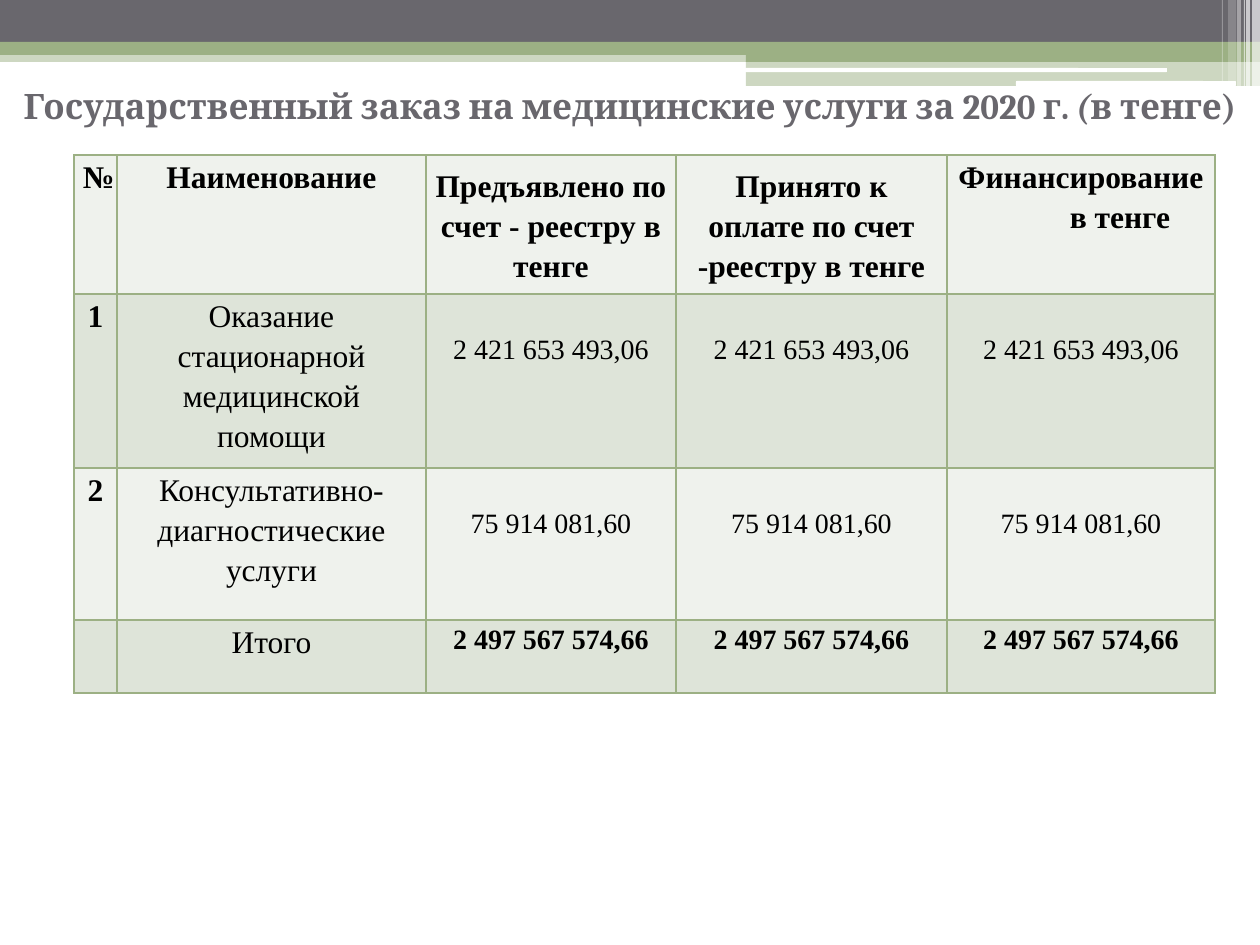
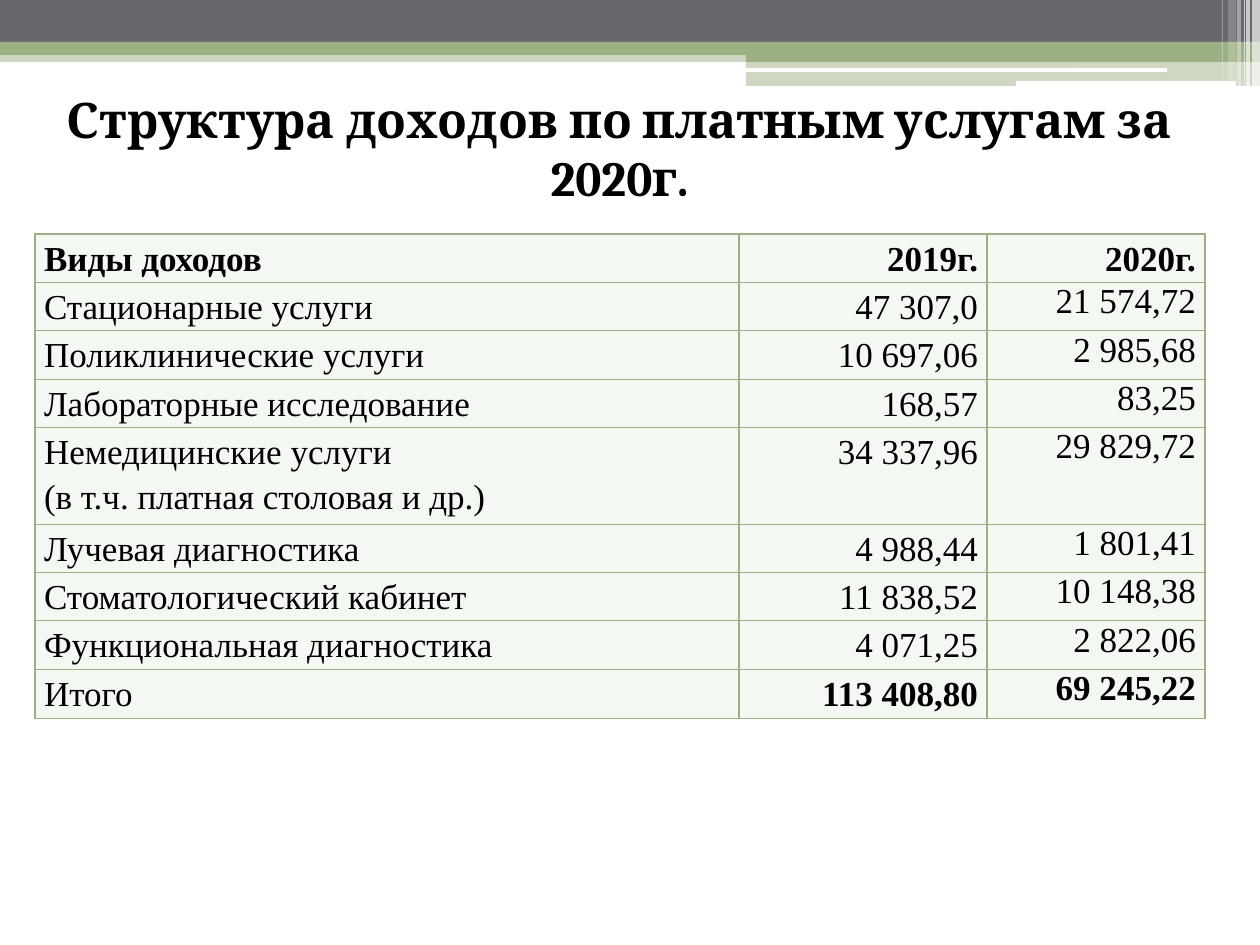
import pptx
import pptx.dml.color
import pptx.enum.shapes
import pptx.enum.text
import pptx.oxml
import pptx.oxml.ns
import pptx.util

RGB = pptx.dml.color.RGBColor
ALIGN = pptx.enum.text.PP_ALIGN
ANCHOR = pptx.enum.text.MSO_ANCHOR
SHAPE = pptx.enum.shapes.MSO_SHAPE

GREEN = RGB(0x9C, 0xB0, 0x84)
GREY = RGB(0x69, 0x67, 0x6D)
WHITE = RGB(0xFF, 0xFF, 0xFF)
BLACK = RGB(0x00, 0x00, 0x00)
BAND_LIGHT = RGB(0xEF, 0xF2, 0xED)
BAND_DARK = RGB(0xDE, 0xE4, 0xD9)
PALE = RGB(0xF4, 0xF8, 0xF2)

PX = 914400 / 126
WIDTH, HEIGHT = 1260, 945
CELL_MARGIN = 9
TITLE_FONT = "Cambria"
TABLE_FONT = "Times New Roman"


def px(n):
    return pptx.util.Emu(round(n * PX))


def write(p, text, size=18, font=TABLE_FONT, color=BLACK, bold=False,
          italic=False, align=ALIGN.CENTER, spacing=None, indent=0):
    """Add one run to a paragraph and format both."""
    p.alignment = align
    if spacing:
        p.line_spacing = spacing
    if indent:
        p._p.get_or_add_pPr().set("marL", str(px(indent)))
    r = p.add_run()
    r.text = text
    f = r.font
    f.size, f.name, f.bold, f.italic = pptx.util.Pt(size), font, bold, italic
    f.color.rgb = color


def add_alpha(fill, percent):
    color = fill._xPr.find(".//" + pptx.oxml.ns.qn("a:srgbClr"))
    color.append(pptx.oxml.parse_xml(
        f'<a:alpha {pptx.oxml.ns.nsdecls("a")} val="{percent * 1000}"/>'))


def add_borders(cell, width):
    for side in "LRTB":
        cell._tc.get_or_add_tcPr().append(pptx.oxml.parse_xml(
            f'<a:ln{side} {pptx.oxml.ns.nsdecls("a")} w="{pptx.util.Pt(width)}">'
            f'<a:solidFill><a:srgbClr val="{GREEN}"/></a:solidFill></a:ln{side}>'))


class Deck:
    """Holds the presentation style and the current slide."""

    def __init__(self):
        self.prs = pptx.Presentation()
        self.prs.slide_width, self.prs.slide_height = px(WIDTH), px(HEIGHT)
        self.s = None

    def slide(self):
        self.s = self.prs.slides.add_slide(self.prs.slide_layouts[6])
        self.header()

    def bar(self, x, y, w, h, color, alpha=100, kind=SHAPE.RECTANGLE):
        sp = self.s.shapes.add_shape(kind, px(x), px(y), px(w), px(h))
        sp.shadow.inherit = False
        sp.line.fill.background()
        sp.fill.solid()
        sp.fill.fore_color.rgb = color
        if alpha < 100:
            add_alpha(sp.fill, alpha)

    def header(self):
        self.bar(0, 50, WIDTH, 12, GREEN, 50)
        self.bar(0, 0, WIDTH, 42, GREY)
        self.bar(0, 42, WIDTH, 13, GREEN)
        self.bar(746, 49, 514, 13, GREEN)
        self.bar(746, 61, 514, 25, GREEN, 50)
        self.bar(745, 68, 422, 4, WHITE, kind=SHAPE.ROUNDED_RECTANGLE)
        self.bar(1016, 81, 220, 5, WHITE, kind=SHAPE.ROUNDED_RECTANGLE)
        for x, w, h, alpha in ((1252, 8, 86, 65), (1246, 4, 86, 65), (1244, 1, 86, 60),
                               (1237, 4, 86, 40), (1228, 8, 81, 20), (1222, 1, 81, 30)):
            self.bar(x, 0, w, h, WHITE, alpha)

    def title(self, x, y, w, h, runs, **fmt):
        """Write a title from (text, italic) runs."""
        tf = self.s.shapes.add_textbox(px(x), px(y), px(w), px(h)).text_frame
        tf.word_wrap = True
        tf.vertical_anchor = ANCHOR.MIDDLE
        for text, italic in runs:
            write(tf.paragraphs[0], text, font=TITLE_FONT, bold=True, italic=italic, **fmt)

    def table(self, x, y, widths, heights, border):
        table = self.s.shapes.add_table(len(heights), len(widths), px(x), px(y),
                                        px(sum(widths)), px(sum(heights))).table
        table.first_row = table.horz_banding = False
        for column, w in zip(table.columns, widths):
            column.width = px(w)
        for row, h in zip(table.rows, heights):
            row.height = px(h)
        for cell in table.iter_cells():
            add_borders(cell, border)
        return table

    def cell(self, cell, text, fill, top=0, anchor=ANCHOR.TOP, last_indent=0, **fmt):
        """Fill a cell; each line of the text is a paragraph."""
        cell.fill.solid()
        cell.fill.fore_color.rgb = fill
        cell.margin_left = cell.margin_right = px(CELL_MARGIN)
        cell.margin_top, cell.margin_bottom = px(top), 0
        cell.vertical_anchor = anchor
        if not text:
            return
        tf = cell.text_frame
        lines = text.split("\n")
        for i, line in enumerate(lines):
            p = tf.add_paragraph() if i else tf.paragraphs[0]
            indent = last_indent if i == len(lines) - 1 else 0
            write(p, line, indent=indent, **fmt)


def state_order(deck):
    deck.slide()
    deck.title(0, 55, WIDTH, 100, [
        ("Государственный заказ на медицинские услуги за 2020 г.", False),
        (" (", True), ("в тенге)", False)], size=20, color=GREY)

    headings = ["№", "Наименование", "Предъявлено по счет - реестру в тенге",
                "Принято к оплате по счет -реестру в тенге", "Финансирование\nв тенге"]
    services = [("1", "Оказание стационарной медицинской помощи", "2 421 653 493,06"),
                ("2", "Консультативно-диагностические услуги", "75 914 081,60"),
                ("", "Итого", "2 497 567 574,66")]
    table = deck.table(74, 155, [43, 309, 250, 271, 268], [139, 160, 152, 73], 1)
    for c, text in enumerate(headings):
        deck.cell(table.cell(0, c), text, BAND_LIGHT, bold=True, spacing=1.15,
                  anchor=ANCHOR.MIDDLE if c in (2, 3) else ANCHOR.TOP,
                  last_indent=78 if c == 4 else 0)
    for r, (number, name, amount) in enumerate(services, 1):
        fill = BAND_DARK if r % 2 else BAND_LIGHT
        total = r == len(services)
        deck.cell(table.cell(r, 0), number, fill, bold=True, spacing=1.15)
        deck.cell(table.cell(r, 1), name, fill, spacing=1.15)
        for c in range(2, 5):
            deck.cell(table.cell(r, c), amount, fill, top=0 if total else 36,
                      size=16, bold=total, spacing=1.15)


def paid_services(deck):
    deck.slide()
    deck.title(29, 98, 1181, 100,
               [("Структура доходов по платным услугам за 2020г.", False)], size=28)

    income = [("Виды доходов", "2019г.", "2020г."),
              ("Стационарные услуги", "47 307,0", "21 574,72"),
              ("Поликлинические услуги", "10 697,06", "2 985,68"),
              ("Лабораторные исследование", "168,57", "83,25"),
              ("Немедицинские услуги\n(в т.ч. платная столовая и др.)", "34 337,96", "29 829,72"),
              ("Лучевая диагностика", "4 988,44", "1 801,41"),
              ("Стоматологический кабинет", "11 838,52", "10 148,38"),
              ("Функциональная диагностика", "4 071,25", "2 822,06"),
              ("Итого", "113 408,80", "69 245,22")]
    last = len(income) - 1
    heights = [44 * (1 + row[0].count("\n")) for row in income[:-1]] + [49]
    table = deck.table(35, 234, [704, 248, 218], heights, 0.75)
    for r, row in enumerate(income):
        for c, text in enumerate(row):
            deck.cell(table.cell(r, c), text, PALE, size=20,
                      bold=r == 0 or (r == last and c > 0),
                      align=ALIGN.RIGHT if c else ALIGN.LEFT,
                      spacing=1.0 if r and c == 2 else 1.15)


def main():
    deck = Deck()
    state_order(deck)
    paid_services(deck)
    deck.prs.save("out.pptx")


if __name__ == "__main__":
    main()
